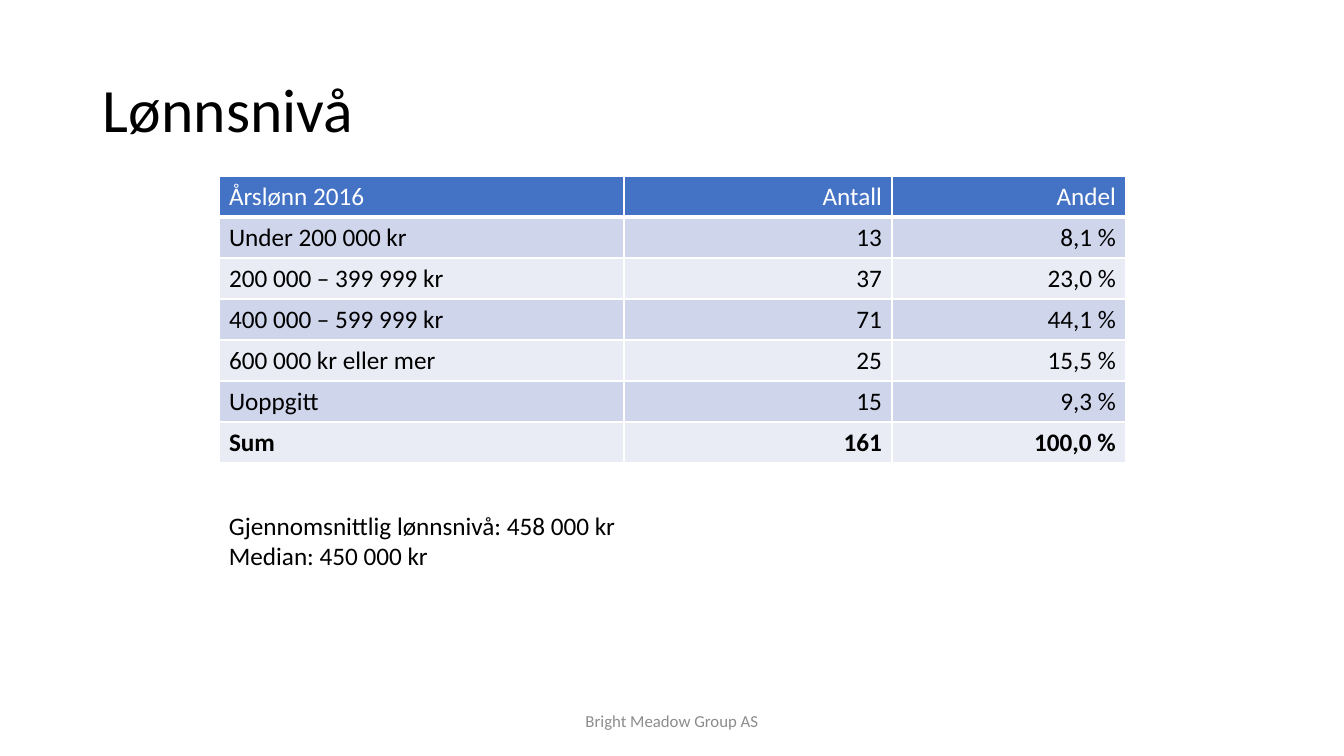
from lxml import etree
from pptx import Presentation
from pptx.dml.color import RGBColor
from pptx.enum.text import MSO_ANCHOR, PP_ALIGN
from pptx.oxml.ns import qn
from pptx.util import Pt

LEFT, CENTER, RIGHT = PP_ALIGN.LEFT, PP_ALIGN.CENTER, PP_ALIGN.RIGHT
TOP, MIDDLE = MSO_ANCHOR.TOP, MSO_ANCHOR.MIDDLE

TITLE = ["Lønnsnivå"]
SALARIES = [
    ("Årslønn 2016", "Antall", "Andel"),
    ("Under 200 000 kr", "13", "8,1 %"),
    ("200 000 – 399 999 kr", "37", "23,0 %"),
    ("400 000 – 599 999 kr", "71", "44,1 %"),
    ("600 000 kr eller mer", "25", "15,5 %"),
    ("Uoppgitt", "15", "9,3 %"),
    ("Sum", "161", "100,0 %"),
]
AVERAGES = ["Gjennomsnittlig lønnsnivå: 458 000 kr", "Median: 450 000 kr"]
FOOTER = ["Bright Meadow Group AS"]

COLORS = {
    "text": "000000",
    "white": "FFFFFF",
    "header": "4472C4",
    "odd_row": "CFD5EA",
    "even_row": "E9EBF5",
    "footer": "8C8C8C",
}
FONT = "Calibri"
SLIDE_SIZE = (1344, 756)
TABLE_LEFT, TABLE_TOP, ROW_HEIGHT = 219, 176, 41
COLUMN_WIDTHS = (405, 268, 234)


def px(length):
    return round(length * 914400 / 100.8)


def add_run(paragraph, text, size, color, bold=False):
    run = paragraph.add_run()
    run.text = text
    run.font.name = FONT
    run.font.size = Pt(size)
    run.font.bold = bold
    run.font.color.rgb = RGBColor.from_string(COLORS[color])


def add_text(slide, box, lines, size, color, align=LEFT, anchor=TOP, spacing=1.0, wrap=True):
    frame = slide.shapes.add_textbox(*map(px, box)).text_frame
    frame.word_wrap = wrap
    frame.vertical_anchor = anchor
    for index, line in enumerate(lines):
        paragraph = frame.add_paragraph() if index else frame.paragraphs[0]
        paragraph.alignment = align
        paragraph.line_spacing = spacing
        add_run(paragraph, line, size, color)


def set_borders(cell, bottom_width):
    properties = cell._tc.get_or_add_tcPr()
    widths = {"a:lnL": 1, "a:lnR": 1, "a:lnT": 1, "a:lnB": bottom_width}
    for position, (tag, width) in enumerate(widths.items()):
        line = etree.Element(qn(tag), w=str(Pt(width)))
        fill = etree.SubElement(line, qn("a:solidFill"))
        etree.SubElement(fill, qn("a:srgbClr"), val=COLORS["white"])
        properties.insert(position, line)


def add_salary_table(slide):
    box = (TABLE_LEFT, TABLE_TOP, sum(COLUMN_WIDTHS), ROW_HEIGHT * len(SALARIES))
    table = slide.shapes.add_table(len(SALARIES), len(COLUMN_WIDTHS), *map(px, box)).table
    for column, width in zip(table.columns, COLUMN_WIDTHS):
        column.width = px(width)
    for row_index, values in enumerate(SALARIES):
        table.rows[row_index].height = px(ROW_HEIGHT)
        is_header = row_index == 0
        is_sum = row_index == len(SALARIES) - 1
        band = "header" if is_header else "odd_row" if row_index % 2 else "even_row"
        for column_index, value in enumerate(values):
            cell = table.cell(row_index, column_index)
            cell.fill.solid()
            cell.fill.fore_color.rgb = RGBColor.from_string(COLORS[band])
            set_borders(cell, 3 if is_header else 1)
            paragraph = cell.text_frame.paragraphs[0]
            paragraph.alignment = RIGHT if column_index else LEFT
            add_run(paragraph, value, 18, "white" if is_header else "text", is_sum)


def main():
    presentation = Presentation()
    presentation.slide_width, presentation.slide_height = map(px, SLIDE_SIZE)
    slide = presentation.slides.add_slide(presentation.slide_layouts[6])
    add_text(slide, (93, 40, 1159, 146), TITLE, 44, "text", anchor=MIDDLE, spacing=0.9)
    add_salary_table(slide)
    add_text(slide, (445, 701, 454, 40), FOOTER, 12, "footer", CENTER, MIDDLE)
    add_text(slide, (TABLE_LEFT, 505, 410, 72), AVERAGES, 18, "text", wrap=False)
    presentation.save("out.pptx")


if __name__ == "__main__":
    main()
